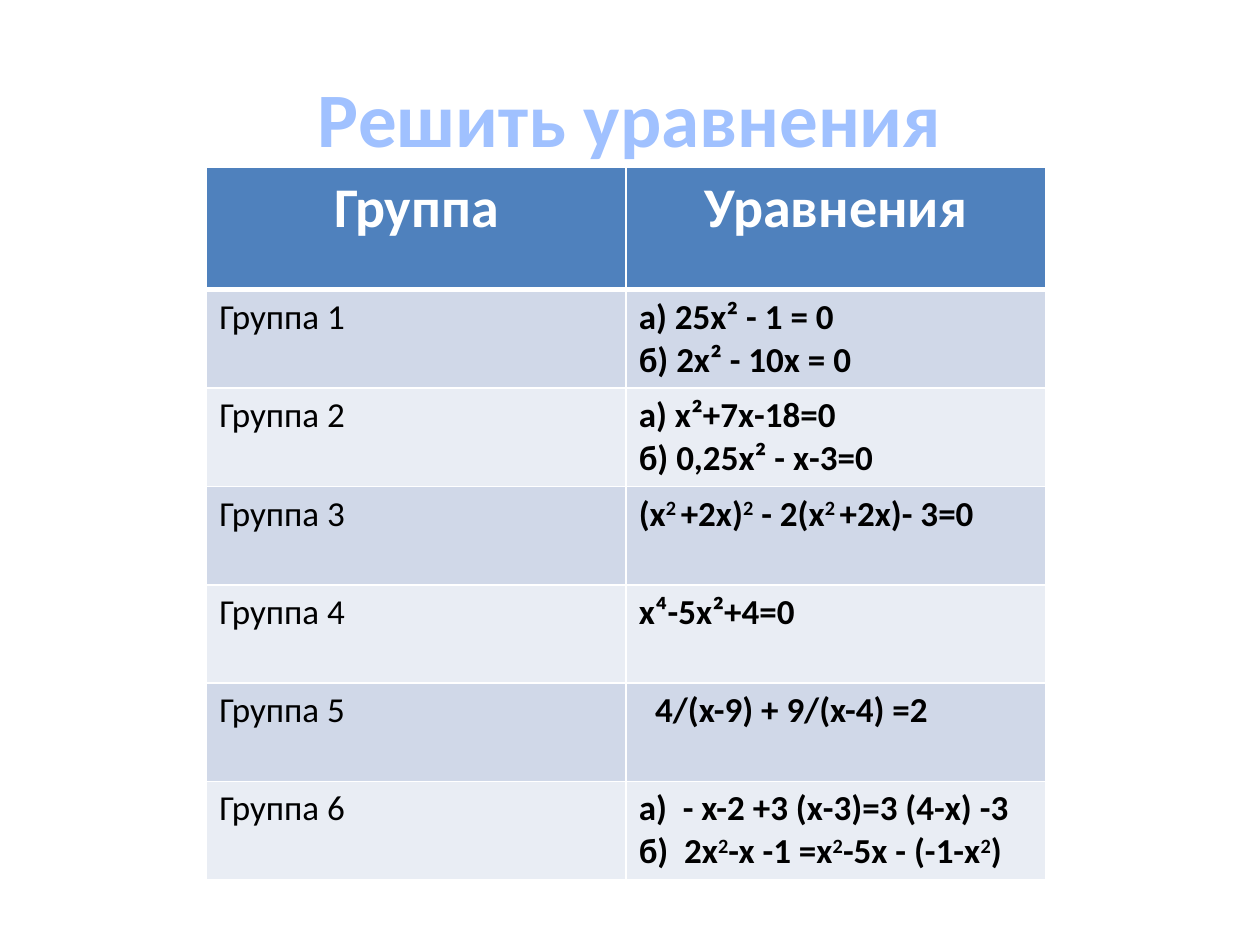
import pptx
import pptx.util
import pptx.dml.color
import pptx.enum.text
from lxml import etree
from pptx.oxml import ns

Inches, Pt = pptx.util.Inches, pptx.util.Pt
CENTER = pptx.enum.text.PP_ALIGN.CENTER

# Content: text between bars is superscript
TITLE = "Решить уравнения"
HEADS = ["Группа", "Уравнения"]
TASKS = [
    ["а) 25х² - 1 = 0", "б) 2х² - 10х = 0"],
    ["а) х²+7х-18=0", "б) 0,25х² - х-3=0"],
    ["(x|2 |+2x)|2| - 2(x|2 |+2x)- 3=0"],
    ["х⁴-5х²+4=0"],
    ["4/(x-9) + 9/(x-4) =2"],
    ["а)  - x-2 +3 (х-3)=3 (4-х) -3", "б)  2x|2|-x -1 =x|2|-5x - (-1-х|2|)"],
]
INSET = {5: 0.23}  # left margin of the indented row

# Look
FONT = "Calibri"
BANDS = ["D0D8E8", "E9EDF4"]
STOPS = [(0, "BFD3F9"), (9, "A0C1FF"), (50, "003D85"), (79, "A0C1FF"), (100, "BFD3F9")]
HEAD_H, ROW_H, COL_W = 0.97, 0.78, 3.33


def color(code):
    return pptx.dml.color.RGBColor.from_string(code)


def add(parent, tag, **attrs):
    node = etree.SubElement(parent, ns.qn(tag))
    for key, val in attrs.items():
        node.set(key, str(val))
    return node


def style(para, size, code, bold):
    font = para.font
    font.name, font.size, font.bold = FONT, Pt(size), bold
    font.color.rgb = color(code)


def border(cell, low):
    props = cell._tc.get_or_add_tcPr()
    for side, width in zip("LRTB", (1, 1, 1, low)):
        line = add(props, "a:ln" + side, w=Pt(width))
        add(add(line, "a:solidFill"), "a:srgbClr", val="FFFFFF")


def write(cell, lines, size, code, bold, fill, low=1, align=None):
    border(cell, low)
    cell.fill.solid()
    cell.fill.fore_color.rgb = color(fill)
    frame = cell.text_frame
    for i, line in enumerate(lines):
        para = frame.add_paragraph() if i else frame.paragraphs[0]
        para.alignment = align
        style(para, size, code, bold)
        for j, part in enumerate(line.split("|")):
            run = para.add_run()
            run.text = part
            if j % 2:
                run.font._element.set("baseline", "30000")


def glow(run):
    """Outline the title and fill it with a vertical gradient."""
    props = run.font._element
    line = add(props, "a:ln", w=Pt(0.83))
    add(add(line, "a:solidFill"), "a:srgbClr", val="467AB8")
    grad = add(props, "a:gradFill")
    stops = add(grad, "a:gsLst")
    for pos, code in STOPS:
        add(add(stops, "a:gs", pos=pos * 1000), "a:srgbClr", val=code)
    add(grad, "a:lin", ang=90 * 60000)


def main():
    deck = pptx.Presentation()
    deck.slide_width, deck.slide_height = Inches(10), Inches(7.5)
    slide = deck.slides.add_slide(deck.slide_layouts[5])

    # Title
    title = slide.shapes.title
    title.left, title.top = Inches(0.5), Inches(0.3)
    title.width, title.height = Inches(9), Inches(1.25)
    para = title.text_frame.paragraphs[0]
    para.alignment = CENTER
    run = para.add_run()
    run.text = TITLE
    glow(run)
    font = para.font
    font.name, font.size, font.bold = FONT, Pt(44), True

    # Table
    count = len(TASKS)
    grid = slide.shapes.add_table(
        count + 1, 2, Inches(1.64), Inches(1.33),
        Inches(2 * COL_W), Inches(HEAD_H + count * ROW_H)).table
    for col in grid.columns:
        col.width = Inches(COL_W)
    for i, row in enumerate(grid.rows):
        row.height = Inches(ROW_H if i else HEAD_H)

    # Header row
    for i, head in enumerate(HEADS):
        write(grid.cell(0, i), [head], 32, "FFFFFF", True, "4F81BD", 3, CENTER)

    # Group rows
    for i, lines in enumerate(TASKS, 1):
        fill = BANDS[(i - 1) % 2]
        write(grid.cell(i, 0), [f"Группа {i}"], 20, "000000", False, fill)
        write(grid.cell(i, 1), lines, 20, "000000", True, fill)
        grid.cell(i, 1).margin_left = Inches(INSET.get(i, 0.1))

    deck.save("out.pptx")


if __name__ == "__main__":
    main()
